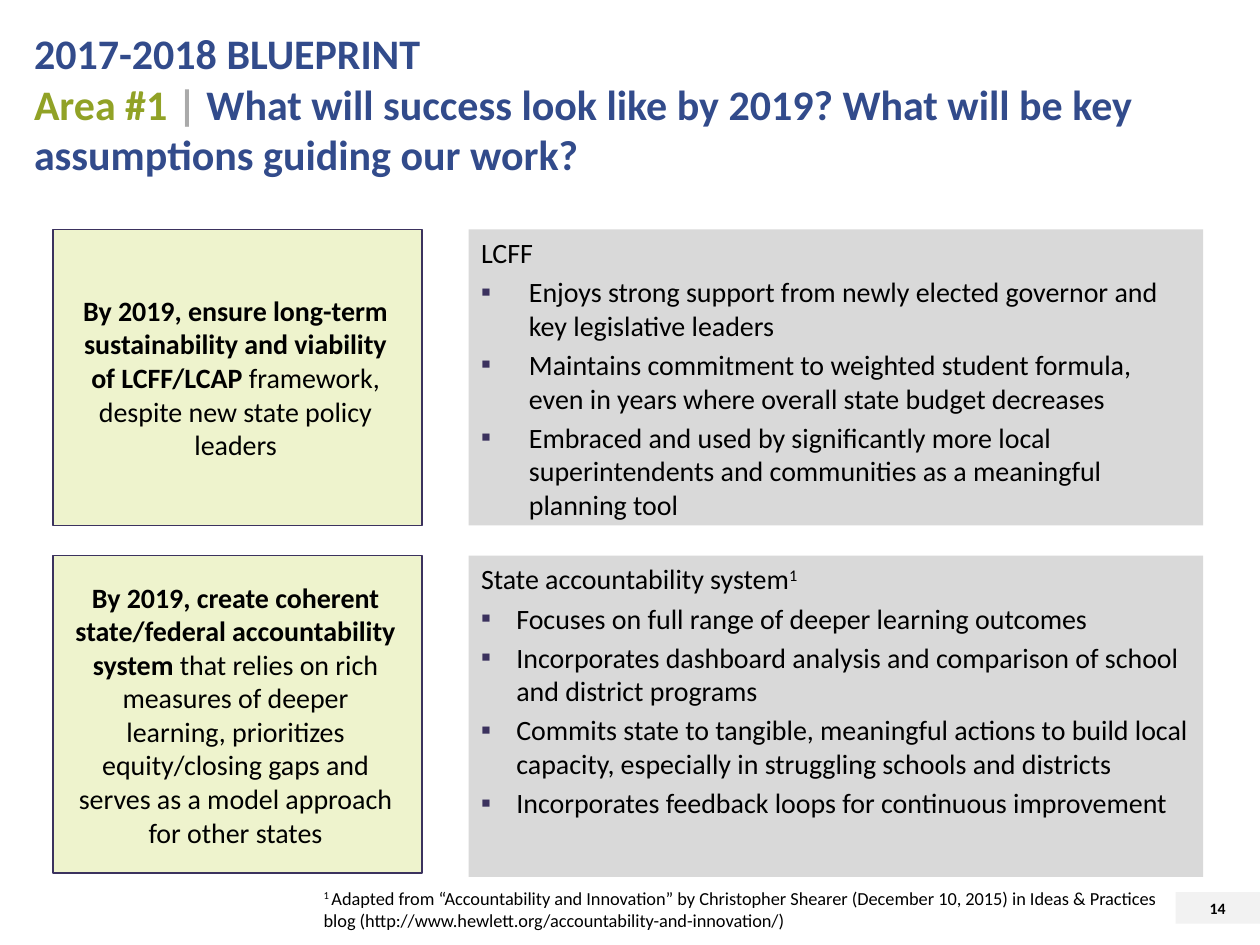
from lxml.etree import SubElement
from pptx import Presentation
from pptx.dml.color import RGBColor
from pptx.enum.shapes import MSO_SHAPE
from pptx.enum.text import MSO_ANCHOR, MSO_AUTO_SIZE, PP_ALIGN
from pptx.oxml.ns import qn
from pptx.util import Inches, Pt

COLORS = {
    "blue": "324B8B", "olive": "91A226", "silver": "AAAAAA", "purple": "3B325E",
    "pale_green": "EEF3CD", "gray": "D9D9D9", "light_gray": "F2F2F2", "black": "000000",
}


def add_box(left, top, width, height, fill, outlined=False):
    box = slide.shapes.add_shape(
        MSO_SHAPE.RECTANGLE, Inches(left), Inches(top), Inches(width), Inches(height))
    box.shadow.inherit = False
    box.fill.solid()
    box.fill.fore_color.rgb = RGBColor.from_string(COLORS[fill])
    if outlined:
        box.line.color.rgb = RGBColor.from_string(COLORS["purple"])
        box.line.width = Pt(0.75)
    else:
        box.line.fill.background()
    box.text_frame.word_wrap = True
    return box


def write(para, spans, size, align=PP_ALIGN.LEFT):
    """Fill a paragraph with (text, style) spans; style is "", "bold" or "super"."""
    para.alignment = align
    para.font.name = "Calibri"
    para.font.size = Pt(size)
    para.font.color.rgb = RGBColor.from_string(COLORS["black"])
    for text, style in spans:
        span = para.add_run()
        span.text = text
        if style == "bold":
            span.font.bold = True
        elif style == "super":
            span._r.get_or_add_rPr().set("baseline", "30000")


deck = Presentation()
deck.slide_width, deck.slide_height = Inches(10), Inches(7.5)
slide = deck.slides.add_slide(deck.slide_layouts[5])

# Title
title = slide.shapes.title
title.left, title.top = Inches(0.17), Inches(0.17)
title.width, title.height = Inches(9.68), Inches(2.03)
frame = title.text_frame
frame.word_wrap = True
frame.auto_size = MSO_AUTO_SIZE.NONE
frame.vertical_anchor = MSO_ANCHOR.TOP
para = frame.paragraphs[0]
para.alignment = PP_ALIGN.LEFT
para.font.name = "Calibri"
para.font.size = Pt(24)
para.font.bold = True
for text, color in [
    ("2017-2018 BLUEPRINT", "blue"),
    ("Area #1", "olive"),
    (" | ", "silver"),
    ("What will success look like by 2019? What will be key assumptions guiding our work?", "blue"),
]:
    span = para.add_run()
    span.text = text
    span.font.color.rgb = RGBColor.from_string(COLORS[color])
    if text.endswith("BLUEPRINT"):
        para.add_line_break()

# Goal on the left, signs of success on the right
rows = [
    {
        "top": 1.82, "goal_height": 2.35, "signs_height": 2.35, "indent": 0.38,
        "goal": [("By 2019, ensure long-term sustainability and viability of LCFF/LCAP ", "bold"),
                 ("framework, despite new state policy leaders", "")],
        "heading": [("LCFF", "")],
        "signs": [
            "Enjoys strong support from newly elected governor and key legislative leaders",
            "Maintains commitment to weighted student formula, even in years where overall "
            "state budget decreases",
            "Embraced and used by significantly more local superintendents and communities "
            "as a meaningful planning tool",
        ],
    },
    {
        "top": 4.41, "goal_height": 2.52, "signs_height": 2.55, "indent": 0.28,
        "goal": [("By 2019, create coherent state/federal accountability system ", "bold"),
                 ("that relies on rich measures of deeper learning, prioritizes equity/closing "
                  "gaps and serves as a model approach for other states", "")],
        "heading": [("State accountability system", ""), ("1", "super")],
        "signs": [
            "Focuses on full range of deeper learning outcomes",
            "Incorporates dashboard analysis and comparison of school and district programs",
            "Commits state to tangible, meaningful actions to build local capacity, "
            "especially in struggling schools and districts",
            "Incorporates feedback loops for continuous improvement",
        ],
    },
]
for row in rows:
    goal = add_box(0.42, row["top"], 2.93, row["goal_height"], "pale_green", outlined=True)
    frame = goal.text_frame
    frame.vertical_anchor = MSO_ANCHOR.MIDDLE
    frame.margin_left = frame.margin_top = frame.margin_bottom = Inches(0.09)
    frame.margin_right = Inches(0.18)
    para = frame.paragraphs[0]
    para._p.get_or_add_pPr().set("marL", str(Inches(0.06)))
    write(para, row["goal"], 16, PP_ALIGN.CENTER)

    signs = add_box(3.72, row["top"], 5.83, row["signs_height"], "gray")
    frame = signs.text_frame
    frame.vertical_anchor = MSO_ANCHOR.TOP
    write(frame.paragraphs[0], row["heading"], 16)
    for sign in row["signs"]:
        para = frame.add_paragraph()
        para.space_before = Pt(3.2)
        properties = para._p.get_or_add_pPr()
        properties.set("marL", str(Inches(row["indent"])))
        properties.set("indent", str(-Inches(row["indent"])))
        bullet_color = SubElement(properties, qn("a:buClr"))
        SubElement(bullet_color, qn("a:srgbClr"), val=COLORS["purple"])
        SubElement(properties, qn("a:buFont"), typeface="Calibri")
        SubElement(properties, qn("a:buChar"), char="▪")
        write(para, [(sign, "")], 16)

# Footnote
note = slide.shapes.add_textbox(Inches(2.47), Inches(6.99), Inches(7.08), Inches(0.47))
note.text_frame.word_wrap = True
write(note.text_frame.paragraphs[0], [
    ("1 ", "super"),
    ("Adapted from “Accountability and Innovation” by Christopher Shearer (December 10, 2015) "
     "in Ideas & Practices blog (http://www.hewlett.org/accountability-and-innovation/)", ""),
], 10.5)

# Page number
number = add_box(9.33, 7.08, 0.67, 0.25, "light_gray")
number.text_frame.vertical_anchor = MSO_ANCHOR.MIDDLE
write(number.text_frame.paragraphs[0], [("14", "bold")], 9, PP_ALIGN.CENTER)

deck.save("out.pptx")
